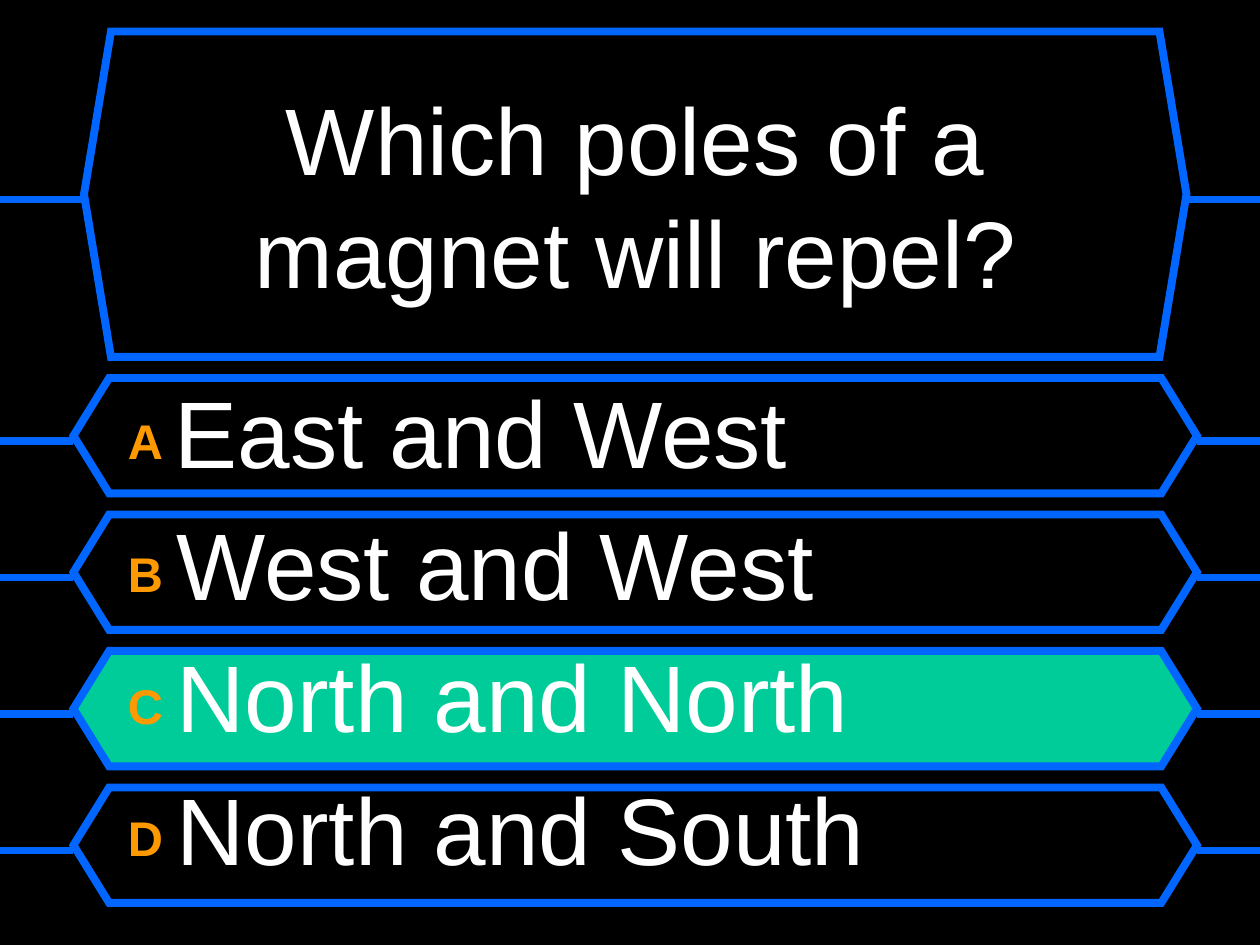
"""Build a quiz slide with a question panel and four answer bars."""
from dataclasses import dataclass

import lxml.etree
import pptx
import pptx.dml.color
import pptx.enum.shapes
import pptx.enum.text
import pptx.oxml.ns
import pptx.util

COLUMNS, ROWS = 120, 90
CELL = pptx.util.Inches(10) // COLUMNS
FIRST_BAR_ROW, BAR_PITCH = 36, 13


@dataclass(frozen=True)
class Theme:
    night: str = "000000"
    outline: str = "0066FF"
    correct: str = "00CC99"
    letter: str = "FF9900"
    words: str = "FFFFFF"
    font: str = "Arial"
    text_size: int = 54
    letter_size: int = 48
    stroke: float = 4.5


@dataclass(frozen=True)
class Panel:
    column: int
    row: int
    columns: int
    rows: int
    point: float
    wire_row: int
    fill: str


@dataclass(frozen=True)
class Answer:
    letter: str
    wording: str
    correct: bool = False


THEME = Theme()
QUESTION = "Which poles of a magnet will repel?"
ANSWERS = (
    Answer("A", "East and West"),
    Answer("B", "West and West"),
    Answer("C", "North and North", correct=True),
    Answer("D", "North and South"),
)


def rgb(code: str) -> pptx.dml.color.RGBColor:
    return pptx.dml.color.RGBColor.from_string(code)


def apply(target, formats: dict) -> None:
    for attribute, value in formats.items():
        setattr(target, attribute, value)


def cells(*counts: float) -> list[int]:
    return [int(count * CELL) for count in counts]


def style_font(font, size: int, color: str, bold: bool = False) -> None:
    apply(font, {"name": THEME.font, "size": pptx.util.Pt(size), "bold": bold})
    font.color.rgb = rgb(color)


def style_line(line) -> None:
    line.color.rgb = rgb(THEME.outline)
    line.width = pptx.util.Pt(THEME.stroke)


def draw_panel(slide, panel: Panel) -> None:
    hexagon = slide.shapes.add_shape(
        pptx.enum.shapes.MSO_SHAPE.HEXAGON,
        *cells(panel.column, panel.row, panel.columns, panel.rows),
    )
    hexagon.adjustments[0] = panel.point
    hexagon.shadow.inherit = False
    hexagon.fill.solid()
    hexagon.fill.fore_color.rgb = rgb(panel.fill)
    style_line(hexagon.line)
    stroke = hexagon.line._get_or_add_ln()
    lxml.etree.SubElement(stroke, pptx.oxml.ns.qn("a:miter"), lim="800000")


def draw_wires(slide, panel: Panel) -> None:
    right_tip = panel.column + panel.columns
    for start, end in ((panel.column, 0), (COLUMNS, right_tip)):
        wire = slide.shapes.add_connector(
            pptx.enum.shapes.MSO_CONNECTOR.STRAIGHT,
            *cells(start, panel.wire_row, end, panel.wire_row),
        )
        style_line(wire.line)
        lxml.etree.SubElement(wire._element.spPr, pptx.oxml.ns.qn("a:effectLst"))


def write_question(slide) -> None:
    question = slide.shapes.title
    slide.shapes._spTree.append(question._element)
    left, top, width, height = cells(10, 5, 101, 27)
    apply(question, {"left": left, "top": top, "width": width, "height": height})
    apply(question.text_frame, {
        "text": QUESTION,
        "word_wrap": True,
        "auto_size": pptx.enum.text.MSO_AUTO_SIZE.NONE,
        "vertical_anchor": pptx.enum.text.MSO_ANCHOR.MIDDLE,
    })
    paragraph = question.text_frame.paragraphs[0]
    paragraph.alignment = pptx.enum.text.PP_ALIGN.CENTER
    style_font(paragraph.runs[0].font, THEME.text_size, THEME.words)


def write_answer(paragraph, answer: Answer) -> None:
    properties = paragraph._p.get_or_add_pPr()
    indent, = cells(4.5)
    properties.set("marL", str(indent))
    properties.set("indent", str(-indent))
    before = lxml.etree.SubElement(properties, pptx.oxml.ns.qn("a:spcBef"))
    lxml.etree.SubElement(before, pptx.oxml.ns.qn("a:spcPct"), val="20000")
    letter = paragraph.add_run()
    letter.text = f"{answer.letter} "
    style_font(letter.font, THEME.letter_size, THEME.letter, bold=True)
    letter.font._element.set("baseline", "10000")
    wording = paragraph.add_run()
    wording.text = answer.wording
    style_font(wording.font, THEME.text_size, THEME.words)


def write_answers(slide) -> None:
    frame = slide.shapes.add_textbox(*cells(11, 35, 100, 52)).text_frame
    frame.word_wrap = True
    for index, answer in enumerate(ANSWERS):
        paragraph = frame.add_paragraph() if index else frame.paragraphs[0]
        write_answer(paragraph, answer)


def main() -> None:
    deck = pptx.Presentation()
    apply(deck, {"slide_width": COLUMNS * CELL, "slide_height": ROWS * CELL})
    slide = deck.slides.add_slide(deck.slide_layouts.get_by_name("Title Only"))
    slide.background.fill.solid()
    slide.background.fill.fore_color.rgb = rgb(THEME.night)

    panels = [Panel(8, 3, 105, 31, 0.083, 19, THEME.night)]
    for index, answer in enumerate(ANSWERS):
        row = FIRST_BAR_ROW + index * BAR_PITCH
        fill = THEME.correct if answer.correct else THEME.night
        panels.append(Panel(7, row, 107, 11, 0.309, row + 6, fill))

    for panel in panels:
        draw_panel(slide, panel)
    write_question(slide)
    write_answers(slide)
    for panel in panels:
        draw_wires(slide, panel)
    deck.save("out.pptx")


if __name__ == "__main__":
    main()
